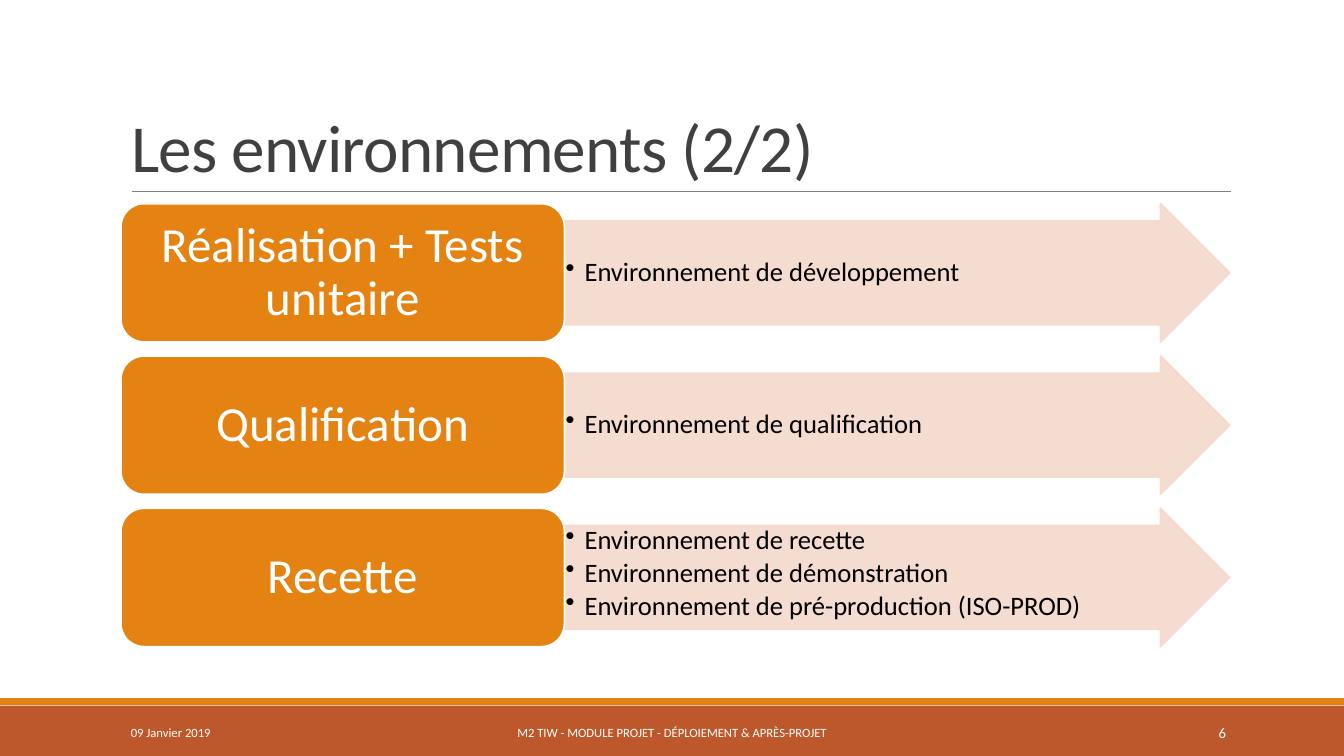
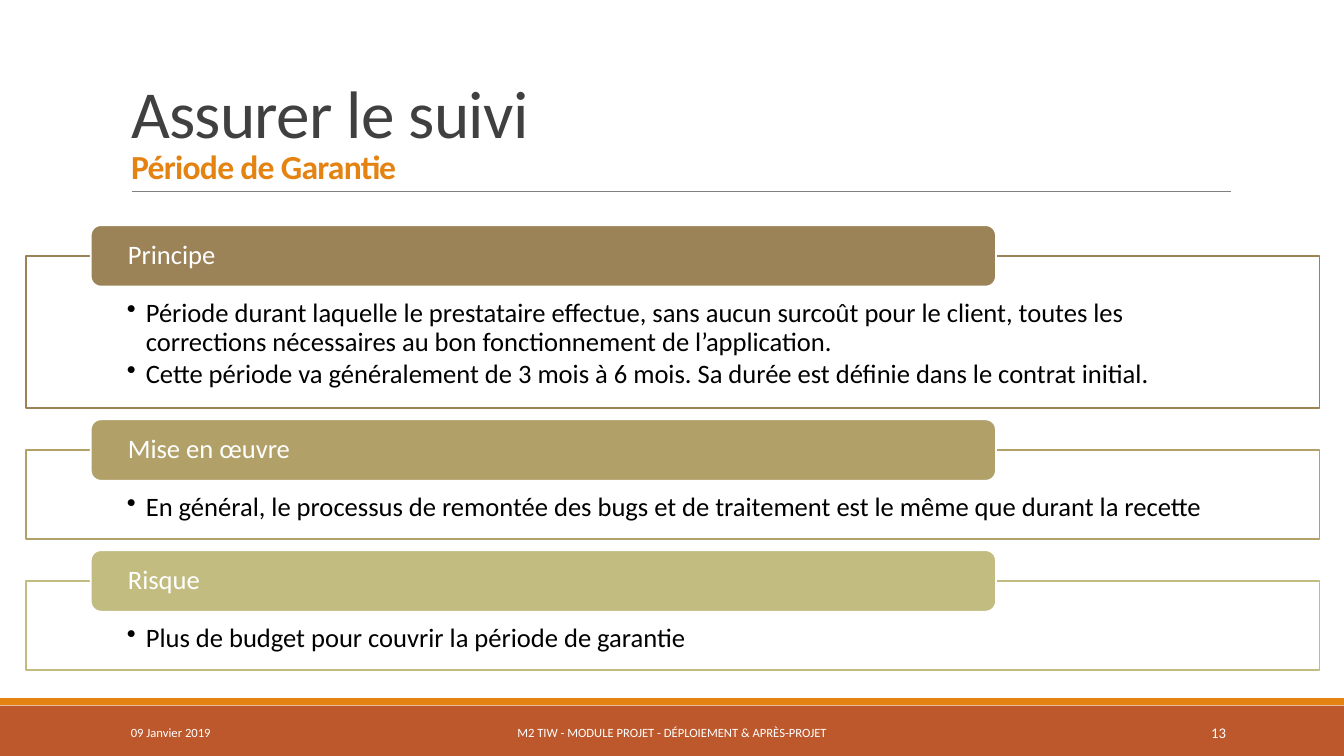
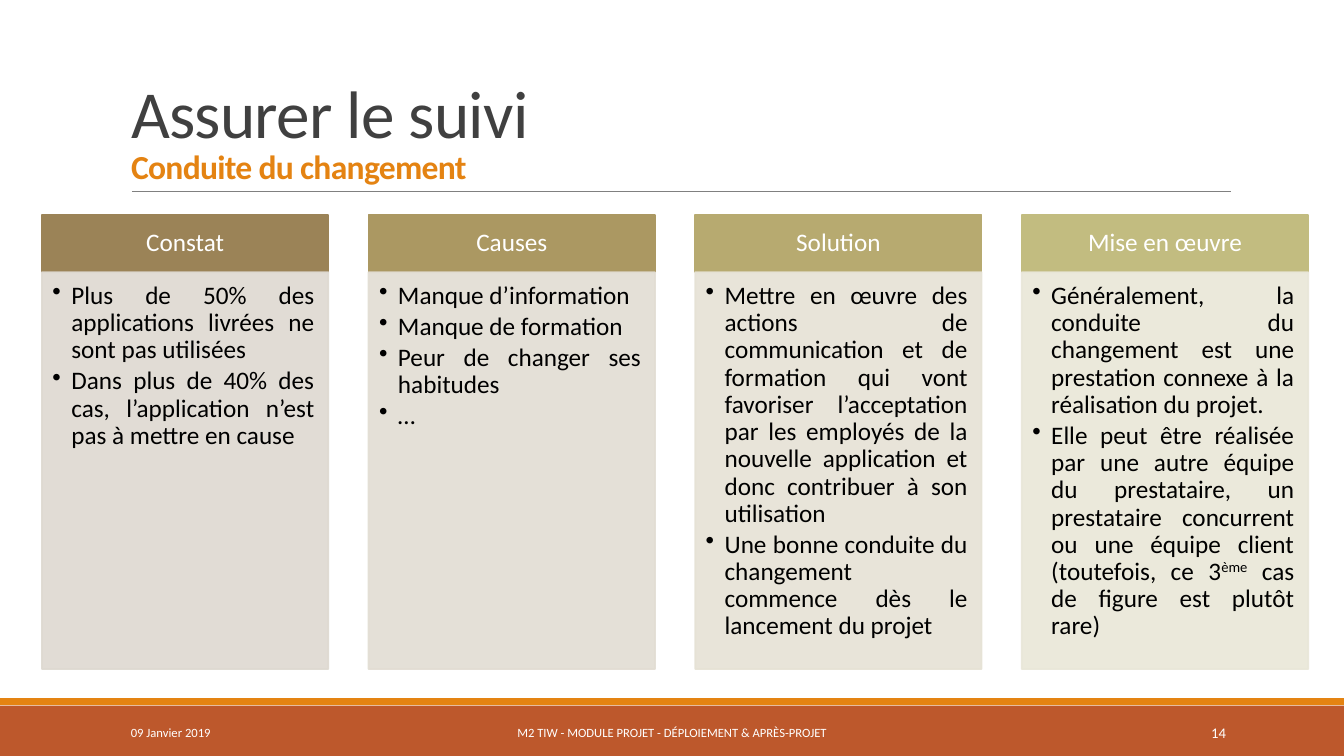
from lxml.etree import SubElement
from pptx import Presentation
from pptx.dml.color import RGBColor
from pptx.enum.shapes import MSO_CONNECTOR, MSO_SHAPE
from pptx.enum.text import MSO_ANCHOR, MSO_AUTO_SIZE, PP_ALIGN
from pptx.oxml.ns import qn
from pptx.util import Pt

FONT = "Calibri"
WHITE, BLACK, GREY, RULE = "FFFFFF", "000000", "404040", "808080"
ORANGE, RUST, PALE = "E48312", "BD582C", "F5D9CC"
color = RGBColor.from_string


def add_box(page, preset, left, top, width, height, fill, line=None, fill_alpha=100, line_alpha=100):
    box = page.shapes.add_shape(preset, Pt(left), Pt(top), Pt(width), Pt(height))
    box.shadow.inherit = False
    box.fill.solid()
    box.fill.fore_color.rgb = color(fill)
    if line:
        box.line.width = Pt(1.25)
        box.line.color.rgb = color(line)
    else:
        box.line.fill.background()
    # Transparency of fill and outline
    properties = box._element.spPr
    for owner, alpha in ((properties, fill_alpha), (properties.find(qn("a:ln")), line_alpha)):
        if alpha < 100:
            shade = owner.find(qn("a:solidFill")).find(qn("a:srgbClr"))
            SubElement(shade, qn("a:alpha")).set("val", str(alpha * 1000))
    return box


def write(box, texts, size, ink, align=PP_ALIGN.LEFT, anchor=MSO_ANCHOR.MIDDLE,
          margins=(7.2, 3.6, 7.2, 3.6), bullets=False, spacing=0.9):
    """Fill a box with paragraphs; text between ^ marks is superscript."""
    frame = box.text_frame
    frame.word_wrap = True
    frame.vertical_anchor = anchor
    frame.margin_left, frame.margin_top, frame.margin_right, frame.margin_bottom = map(Pt, margins)
    for index, text in enumerate(texts):
        para = frame.add_paragraph() if index else frame.paragraphs[0]
        para.alignment = align
        para.line_spacing = spacing
        if bullets:
            para.space_after = Pt(0.15 * size)
            layout = para._p.get_or_add_pPr()
            layout.set("marL", str(Pt(13.5)))
            layout.set("indent", str(-Pt(13.5)))
            SubElement(layout, qn("a:buChar")).set("char", "•")
        for part, piece in enumerate(text.split("^")):
            span = para.add_run()
            span.text = piece
            span.font.name = FONT
            span.font.size = Pt(size)
            span.font.color.rgb = color(ink)
            if part % 2:
                span._r.get_or_add_rPr().set("baseline", "30000")


deck = Presentation()
deck.slide_width, deck.slide_height = Pt(960), Pt(540)

# Title, rule, bands and footer of every slide
headings = [
    ("Les environnements (2/2)", "6"),
    ("Assurer le suivi\vPériode de Garantie", "13"),
    ("Assurer le suivi\vConduite du changement", "14"),
]
pages = []
for heading, number in headings:
    page = deck.slides.add_slide(deck.slide_layouts[5])
    pages.append(page)
    add_box(page, MSO_SHAPE.RECTANGLE, 0, 504, 960, 36, RUST)
    add_box(page, MSO_SHAPE.RECTANGLE, 0, 498.7, 960, 5, ORANGE)
    rule = page.shapes.add_connector(MSO_CONNECTOR.STRAIGHT, Pt(94.3), Pt(136.8), Pt(879), Pt(136.8))
    rule.line.width = Pt(0.5)
    rule.line.color.rgb = color(RULE)
    SubElement(rule._element.spPr, qn("a:effectLst"))

    title = page.shapes.title
    title.left, title.top, title.width, title.height = Pt(86.4), Pt(22.5), Pt(792), Pt(114.3)
    frame = title.text_frame
    frame.text = heading
    frame.word_wrap = True
    frame.auto_size = MSO_AUTO_SIZE.NONE
    frame.vertical_anchor = MSO_ANCHOR.BOTTOM
    para = frame.paragraphs[0]
    para.alignment = PP_ALIGN.LEFT
    para.line_spacing = 0.85
    for span, size, ink, bold in zip(para.runs, (48, 24), (GREY, ORANGE), (False, True)):
        span.font.name = FONT
        span.font.size = Pt(size)
        span.font.bold = bold
        span.font.color.rgb = color(ink)
        span._r.get_or_add_rPr().set("spc", "-50")

    for text, left, width, size, align in (
        ("09 Janvier 2019", 86.4, 194.4, 9, PP_ALIGN.LEFT),
        ("M2 TIW - MODULE PROJET - DÉPLOIEMENT & APRÈS-PROJET", 290.2, 379.4, 9, PP_ALIGN.CENTER),
        (number, 779.8, 103, 10.5, PP_ALIGN.RIGHT),
    ):
        footer = page.shapes.add_textbox(Pt(left), Pt(508.7), Pt(width), Pt(28.8))
        write(footer, [text], size, WHITE, align, spacing=1.0)

environments_page, warranty_page, change_page = pages

# Environments: one phase and one arrow per row
phases = [
    ("Réalisation + Tests unitaire", ["Environnement de développement"]),
    ("Qualification", ["Environnement de qualification"]),
    ("Recette", ["Environnement de recette", "Environnement de démonstration",
                 "Environnement de pré-production (ISO-PROD)"]),
]
for row, (phase, environments) in enumerate(phases):
    top = 145.5 + 108.8 * row
    arrow = add_box(environments_page, MSO_SHAPE.RIGHT_ARROW, 403.2, top, 475.2, 98.8,
                    PALE, PALE, 90, 90)
    arrow.adjustments[0], arrow.adjustments[1] = 0.75, 0.5
    anchor = MSO_ANCHOR.TOP if len(environments) > 1 else MSO_ANCHOR.MIDDLE
    write(arrow, environments, 19, BLACK, anchor=anchor, margins=(0.9,) * 4, bullets=True)
    label = add_box(environments_page, MSO_SHAPE.ROUNDED_RECTANGLE, 86.4, top, 316.8, 98.8, ORANGE, WHITE)
    write(label, [phase], 35, WHITE, PP_ALIGN.CENTER, margins=(10.5, 5.2, 10.5, 5.2))

# Warranty: stacked frames, each with a tab over its top edge
sections = [
    ("Principe", "9B8357", 108.7, [
        "Période durant laquelle le prestataire effectue, sans aucun surcoût pour le client, "
        "toutes les corrections nécessaires au bon fonctionnement de l’application.",
        "Cette période va généralement de 3 mois à 6 mois. Sa durée est définie dans le contrat initial."]),
    ("Mise en œuvre", "B1A169", 63.5, [
        "En général, le processus de remontée des bugs et de traitement est le même que durant la recette"]),
    ("Risque", "C2BC80", 63.5, ["Plus de budget pour couvrir la période de garantie"]),
]
top = 182.8
for name, tint, height, points in sections:
    panel = add_box(warranty_page, MSO_SHAPE.RECTANGLE, 18.7, top, 923.8, height, WHITE, tint, 90)
    write(panel, points, 19, BLACK, anchor=MSO_ANCHOR.TOP, margins=(72, 31, 72, 10.8), bullets=True)
    tab = add_box(warranty_page, MSO_SHAPE.ROUNDED_RECTANGLE, 64.8, top - 22, 646.6, 43.9, tint, WHITE)
    write(tab, [name], 19, WHITE, margins=(24.4, 0, 24.4, 0))
    top += height + 30

# Change management: four columns
columns = [
    ("Constat", "9B8357", "DED9D1", [
        "Plus de 50% des applications livrées ne sont pas utilisées",
        "Dans plus de 40% des cas, l’application n’est pas à mettre en cause"]),
    ("Causes", "AB9862", "E2DDD3", [
        "Manque d’information", "Manque de formation", "Peur de changer ses habitudes", "…"]),
    ("Solution", "B7AA70", "E6E2D5", [
        "Mettre en œuvre des actions de communication et de formation qui vont favoriser l’acceptation "
        "par les employés de la nouvelle application et donc contribuer à son utilisation",
        "Une bonne conduite du changement commence dès le lancement du projet"]),
    ("Mise en œuvre", "C2BC80", "E9E7D8", [
        "Généralement, la conduite du changement est une prestation connexe à la réalisation du projet.",
        "Elle peut être réalisée par une autre équipe du prestataire, un prestataire concurrent "
        "ou une équipe client (toutefois, ce 3^ème^ cas de figure est plutôt rare)"]),
]
for column, (name, tint, wash, points) in enumerate(columns):
    left = 30 + 233.3 * column
    header = add_box(change_page, MSO_SHAPE.RECTANGLE, left, 153.4, 204.6, 41, tint, tint)
    write(header, [name], 18, WHITE, PP_ALIGN.CENTER, margins=(10, 5.8, 10, 5.8))
    body = add_box(change_page, MSO_SHAPE.RECTANGLE, left, 194.4, 204.6, 283.5, wash, wash, 90, 90)
    write(body, points, 18, BLACK, PP_ALIGN.JUSTIFY, MSO_ANCHOR.TOP, (7.5, 7.5, 10, 11.3), bullets=True)

deck.save("out.pptx")
